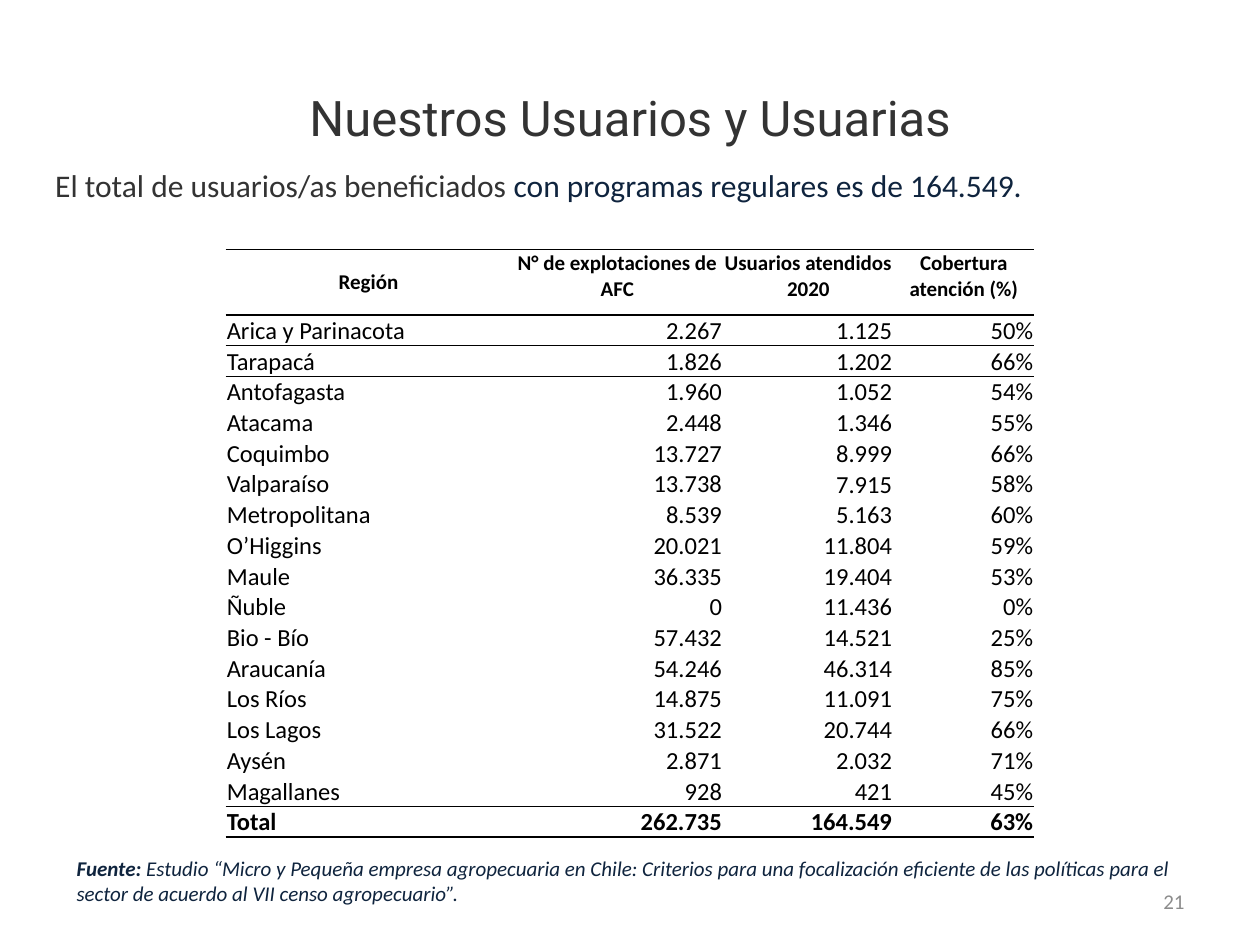
"""Build the slide on users reached per region, with its coverage table."""
import pptx
import pptx.dml.color
import pptx.enum.text
import pptx.oxml
import pptx.oxml.ns
import pptx.util

RGBColor = pptx.dml.color.RGBColor
Pt = pptx.util.Pt
Align = pptx.enum.text.PP_ALIGN
Anchor = pptx.enum.text.MSO_ANCHOR

BLACK = RGBColor(0x00, 0x00, 0x00)
CHARCOAL = RGBColor(0x33, 0x33, 0x33)
NAVY = RGBColor(0x0F, 0x24, 0x3E)
GRAY = RGBColor(0x8C, 0x8C, 0x8C)
PLAIN_TABLE_STYLE = "{2D5ABB26-0587-4C30-8999-92F81FD0307C}"

HEADERS = ("Región", "N° de explotaciones de AFC", "Usuarios atendidos 2020", "Cobertura atención (%)")
REGIONS = (
    ("Arica y Parinacota", "2.267", "1.125", "50%"),
    ("Tarapacá", "1.826", "1.202", "66%"),
    ("Antofagasta", "1.960", "1.052", "54%"),
    ("Atacama", "2.448", "1.346", "55%"),
    ("Coquimbo", "13.727", "8.999", "66%"),
    ("Valparaíso", "13.738", "7.915", "58%"),
    ("Metropolitana", "8.539", "5.163", "60%"),
    ("O’Higgins", "20.021", "11.804", "59%"),
    ("Maule", "36.335", "19.404", "53%"),
    ("Ñuble", "0", "11.436", "0%"),
    ("Bio - Bío", "57.432", "14.521", "25%"),
    ("Araucanía", "54.246", "46.314", "85%"),
    ("Los Ríos", "14.875", "11.091", "75%"),
    ("Los Lagos", "31.522", "20.744", "66%"),
    ("Aysén", "2.871", "2.032", "71%"),
    ("Magallanes", "928", "421", "45%"),
)
TOTAL = ("Total", "262.735", "164.549", "63%")

presentation = pptx.Presentation()
presentation.slide_width = pptx.util.Inches(10)
presentation.slide_height = pptx.util.Inches(7.5)
column = presentation.slide_width / 100
row = presentation.slide_height / 75
slide = presentation.slides.add_slide(presentation.slide_layouts[5])


def write(text_frame, alignment, runs):
    """Fill the first paragraph with runs of (text, font values)."""
    paragraph = text_frame.paragraphs[0]
    paragraph.alignment = alignment
    for text, values in runs:
        run = paragraph.add_run()
        run.text = text
        for name, value in values.items():
            if name == "color":
                run.font.color.rgb = value
            else:
                setattr(run.font, name, value)


def place(shape, left, top, width, height):
    """Move a shape to grid columns and rows."""
    values = {"left": left * column, "top": top * row, "width": width * column, "height": height * row}
    for name, value in values.items():
        setattr(shape, name, int(value))


title = slide.shapes.title
place(title, 5, 3, 90, 12.5)
title.text_frame.vertical_anchor = Anchor.MIDDLE
write(title.text_frame, Align.CENTER,
      [("Nuestros Usuarios y Usuarias", {"size": Pt(28), "name": "Roboto", "color": CHARCOAL})])

lead = {"size": Pt(18), "name": "Calibri"}
note = {"size": Pt(12), "name": "Calibri", "italic": True, "color": NAVY}
text_boxes = (
    ((3.4, 12.7, 92.3, 50.5), Anchor.TOP, Align.JUSTIFY, [
        ("El total de usuarios/as beneficiados ", {**lead, "color": CHARCOAL}),
        ("con programas regulares es de 164.549.", {**lead, "color": NAVY})]),
    ((5.1, 67.4, 90.6, 5), Anchor.TOP, Align.LEFT, [
        ("Fuente:", {**note, "bold": True}),
        (" Estudio “Micro y Pequeña empresa agropecuaria en Chile: Criterios para una focalización "
         "eficiente de las políticas para el sector de acuerdo al VII censo agropecuario”.", note)]),
    ((71.7, 69.5, 23.3, 4), Anchor.MIDDLE, Align.RIGHT, [
        ("21", {"size": Pt(12), "name": "Calibri", "color": GRAY})]),
)
for box, anchor, alignment, runs in text_boxes:
    shape = slide.shapes.add_textbox(0, 0, 0, 0)
    place(shape, *box)
    shape.text_frame.word_wrap = True
    shape.text_frame.vertical_anchor = anchor
    write(shape.text_frame, alignment, runs)

records = (HEADERS, *REGIONS, TOTAL)
last = len(records) - 1
ruled_edges = {0, 1, 2, last, last + 1}
frame = slide.shapes.add_table(len(records), len(HEADERS), 0, 0, 0, 0)
place(frame, 17.9, 19.8, 64.2, 46.3)
table = frame.table
table.first_row = table.horz_banding = False
for style in frame.element.iter(pptx.oxml.ns.qn("a:tableStyleId")):
    style.text = PLAIN_TABLE_STYLE
for table_column, width in zip(table.columns, (22.7, 16.8, 13.5, 11.2)):
    table_column.width = int(width * column)

for row_index, record in enumerate(records):
    header = row_index == 0
    table.rows[row_index].height = int((5.2 if header else 2.4) * row)
    font = {"size": Pt(12 if header else 14), "name": "Calibri", "color": BLACK, "bold": row_index in (0, last)}
    for column_index, text in enumerate(record):
        cell = table.cell(row_index, column_index)
        if header:
            anchor = Anchor.TOP if column_index else Anchor.MIDDLE
            alignment = Align.CENTER
        else:
            anchor = Anchor.TOP if column_index == 2 and row_index < last else Anchor.BOTTOM
            alignment = Align.RIGHT if column_index else Align.LEFT
        margin = Pt(0.72)
        values = {"margin_left": margin, "margin_right": margin, "margin_top": margin,
                  "margin_bottom": 0, "vertical_anchor": anchor}
        for name, value in values.items():
            setattr(cell, name, value)
        cell.fill.background()
        write(cell.text_frame, alignment, [(text, font)])
        for tag, edge in (("lnB", row_index + 1), ("lnT", row_index)):
            if edge in ruled_edges:
                cell._tc.get_or_add_tcPr().insert(0, pptx.oxml.parse_xml(
                    f'<a:{tag} {pptx.oxml.ns.nsdecls("a")} w="{Pt(1)}"><a:solidFill>'
                    f'<a:srgbClr val="{BLACK}"/></a:solidFill></a:{tag}>'))

presentation.save("out.pptx")
